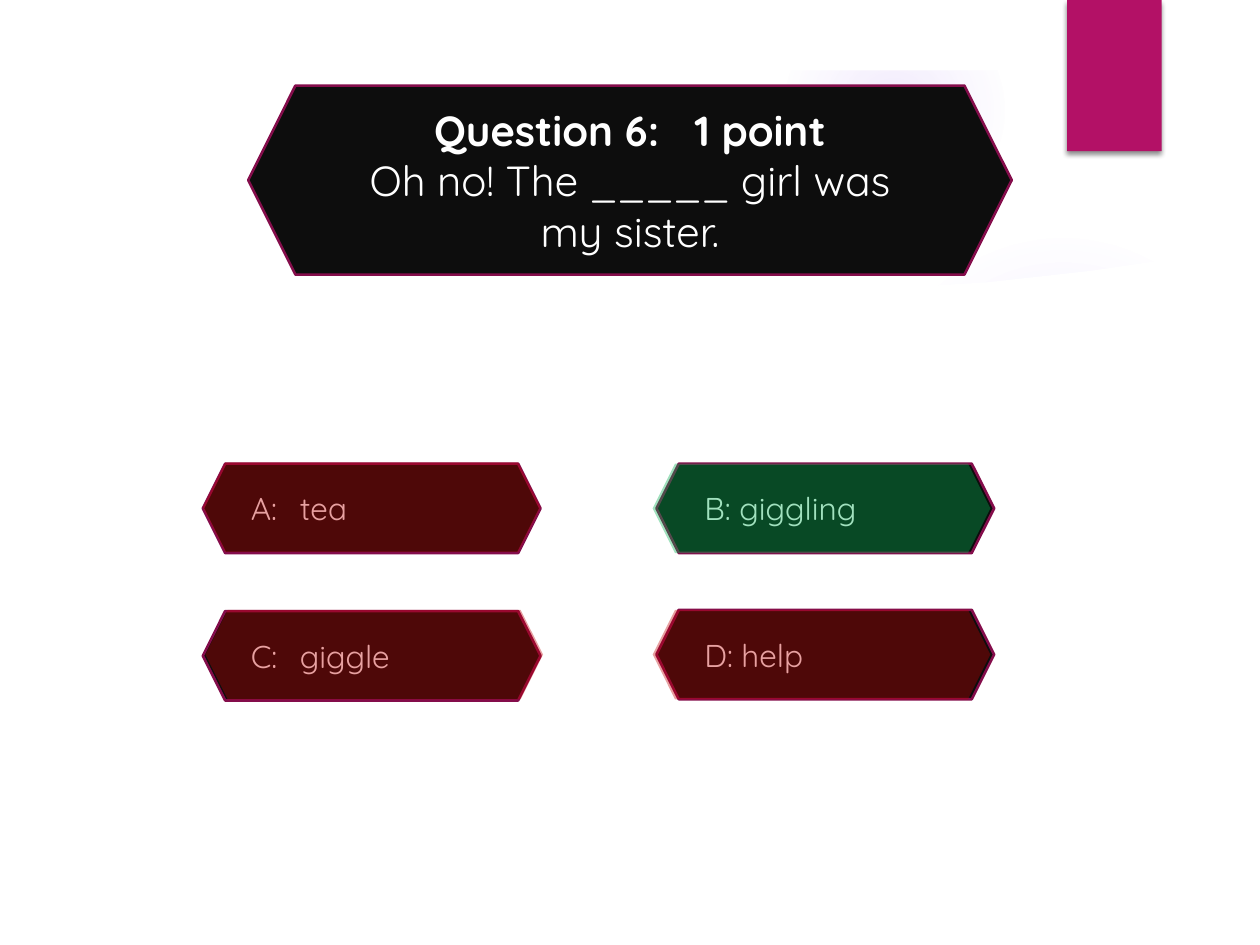
from dataclasses import dataclass

import lxml.etree
import pptx
import pptx.dml.color
import pptx.enum.shapes
import pptx.enum.text
import pptx.oxml.ns
import pptx.util

Inches = pptx.util.Inches
Shapes = pptx.enum.shapes.MSO_SHAPE
Align = pptx.enum.text.PP_ALIGN

BLACK, BORDER, MAGENTA, VIOLET, WHITE = "0D0D0D", "840D4B", "B31166", "9B6BF2", "FFFFFF"
RIGHT, WRONG = "00B050", "C00000"


@dataclass
class Answer:
    text: str
    left: float
    top: float
    tint_left: float
    tint_top: float
    tint: str


@dataclass
class Glow:
    left: float
    top: float
    size: float
    stops: list[tuple[int, int]]  # position and opacity, in percent


ANSWERS = [
    Answer("D: help", 5.21, 4.84, 5.18, 4.84, WRONG),
    Answer("C:\tgiggle", 1.61, 4.85, 1.63, 4.84, WRONG),
    Answer("B: giggling", 5.21, 3.68, 5.18, 3.68, RIGHT),
    Answer("A:\ttea", 1.61, 3.68, 1.61, 3.67, WRONG),
]
ANSWER_SIZE = (2.68, 0.71)
GLOWS = [
    Glow(6.89, 1.83, 3.08, [(0, 7), (36, 6), (69, 0)]),
    Glow(6.22, 0, 1.75, [(0, 14), (36, 7), (73, 0)]),
]
PANEL = [(0.53, 2.03), (0.53, 6.99), (9.47, 6.99), (9.47, 2.03), (8.66, 2.15), (7.85, 2.24),
         (7.04, 2.29), (6.25, 2.33), (5.48, 2.34), (4.39, 2.34), (3.38, 2.3), (2.49, 2.24),
         (1.73, 2.17), (0.99, 2.09)]
FRAME_OUTER = [(0, 0), (0, 7.5), (10, 7.5), (10, 0)]
FRAME_INNER = [(9.45, 6.95), (0.56, 6.95), (0.56, 0.56), (9.45, 0.56)]


def rgb(value: str) -> pptx.dml.color.RGBColor:
    return pptx.dml.color.RGBColor.from_string(value)


def add_element(parent, tag: str, **attributes):
    return lxml.etree.SubElement(
        parent, pptx.oxml.ns.qn(tag), {name: str(value) for name, value in attributes.items()})


def add_color(parent, color: str, opacity: int) -> None:
    node = add_element(parent, "a:srgbClr", val=color)
    add_element(node, "a:alpha", val=opacity * 1000)


def paint(shape, color: str, border: str | None = None) -> None:
    shape.shadow.inherit = False
    shape.fill.solid()
    shape.fill.fore_color.rgb = rgb(color)
    if border:
        shape.line.color.rgb = rgb(border)
        shape.line.width = pptx.util.Pt(1.5)
    else:
        shape.line.fill.background()


def add_preset(page, kind, left: float, top: float, width: float, height: float,
               color: str, border: str | None = None):
    shape = page.shapes.add_shape(kind, Inches(left), Inches(top), Inches(width), Inches(height))
    paint(shape, color, border)
    return shape


def add_glow(page, glow: Glow) -> None:
    """Draw a circle that fades out from its centre."""
    circle = add_preset(page, Shapes.OVAL, glow.left, glow.top, glow.size, glow.size, VIOLET)
    properties = circle.fill._xPr
    solid = properties.find(pptx.oxml.ns.qn("a:solidFill"))
    gradient = lxml.etree.Element(pptx.oxml.ns.qn("a:gradFill"), rotWithShape="1")
    properties.replace(solid, gradient)
    stops = add_element(gradient, "a:gsLst")
    for position, opacity in glow.stops:
        add_color(add_element(stops, "a:gs", pos=position * 1000), VIOLET, opacity)
    direction = add_element(gradient, "a:path", path="circle")
    add_element(direction, "a:fillToRect", l=50000, t=50000, r=50000, b=50000)


def add_outline(page, *contours: list[tuple[float, float]]) -> None:
    """Draw a white shape from one or more closed contours."""
    builder = None
    for contour in contours:
        points = [(Inches(x), Inches(y)) for x, y in contour]
        if builder is None:
            builder = page.shapes.build_freeform(*points[0])
        else:
            builder.move_to(*points[0])
        builder.add_line_segments(points[1:], close=True)
    paint(builder.convert_to_shape(), WHITE)


def add_ribbon(page) -> None:
    ribbon = add_preset(page, Shapes.RECTANGLE, 8.47, 0, 0.75, 1.2, MAGENTA)
    effects = ribbon._element.spPr.find(pptx.oxml.ns.qn("a:effectLst"))
    shadow = add_element(effects, "a:outerShdw", blurRad=pptx.util.Pt(3), dist=pptx.util.Pt(2),
                         dir=90 * 60000, algn="ctr", rotWithShape=0)
    add_color(shadow, "000000", 45)


def write(para, text: str, align, size: int, bold: bool = False) -> None:
    para.alignment = align
    span = para.add_run()
    span.text = text
    font_format = {"name": "Quicksand", "size": pptx.util.Pt(size), "bold": bold}
    for name, value in font_format.items():
        setattr(span.font, name, value)
    span.font.color.rgb = rgb(WHITE)


def add_hexagon(page, left: float, top: float, width: float, height: float):
    """Draw a black bordered hexagon and return its text frame."""
    box = add_preset(page, Shapes.HEXAGON, left, top, width, height, BLACK, BORDER)
    frame = box.text_frame
    frame.word_wrap = True
    frame.vertical_anchor = pptx.enum.text.MSO_ANCHOR.MIDDLE
    return frame


def add_answer(page, answer: Answer) -> None:
    para = add_hexagon(page, answer.left, answer.top, *ANSWER_SIZE).paragraphs[0]
    tabs = add_element(para._p.get_or_add_pPr(), "a:tabLst")
    add_element(tabs, "a:tab", pos=Inches(0.39), algn="l")
    write(para, answer.text, Align.LEFT, 18)


def add_tint(page, answer: Answer) -> None:
    tint = add_preset(page, Shapes.HEXAGON, answer.tint_left, answer.tint_top,
                      *ANSWER_SIZE, answer.tint)
    color = tint.fill._xPr.find(".//" + pptx.oxml.ns.qn("a:srgbClr"))
    add_element(color, "a:alpha", val=37000)


def add_question(page) -> None:
    frame = add_hexagon(page, 1.97, 0.68, 6.06, 1.5)
    write(frame.paragraphs[0], "Question 6:   1 point", Align.CENTER, 24, bold=True)
    write(frame.add_paragraph(), "Oh no! The _____ girl was my sister.", Align.CENTER, 24)


def main() -> None:
    deck = pptx.Presentation()
    deck.slide_width, deck.slide_height = Inches(10), Inches(7.5)
    page = deck.slides.add_slide(deck.slide_layouts[6])
    for glow in GLOWS:
        add_glow(page, glow)
    add_outline(page, PANEL)
    add_outline(page, FRAME_OUTER, FRAME_INNER)
    add_ribbon(page)
    for answer in ANSWERS:
        add_answer(page, answer)
    add_question(page)
    for answer in ANSWERS:
        add_tint(page, answer)
    deck.save("out.pptx")


if __name__ == "__main__":
    main()
